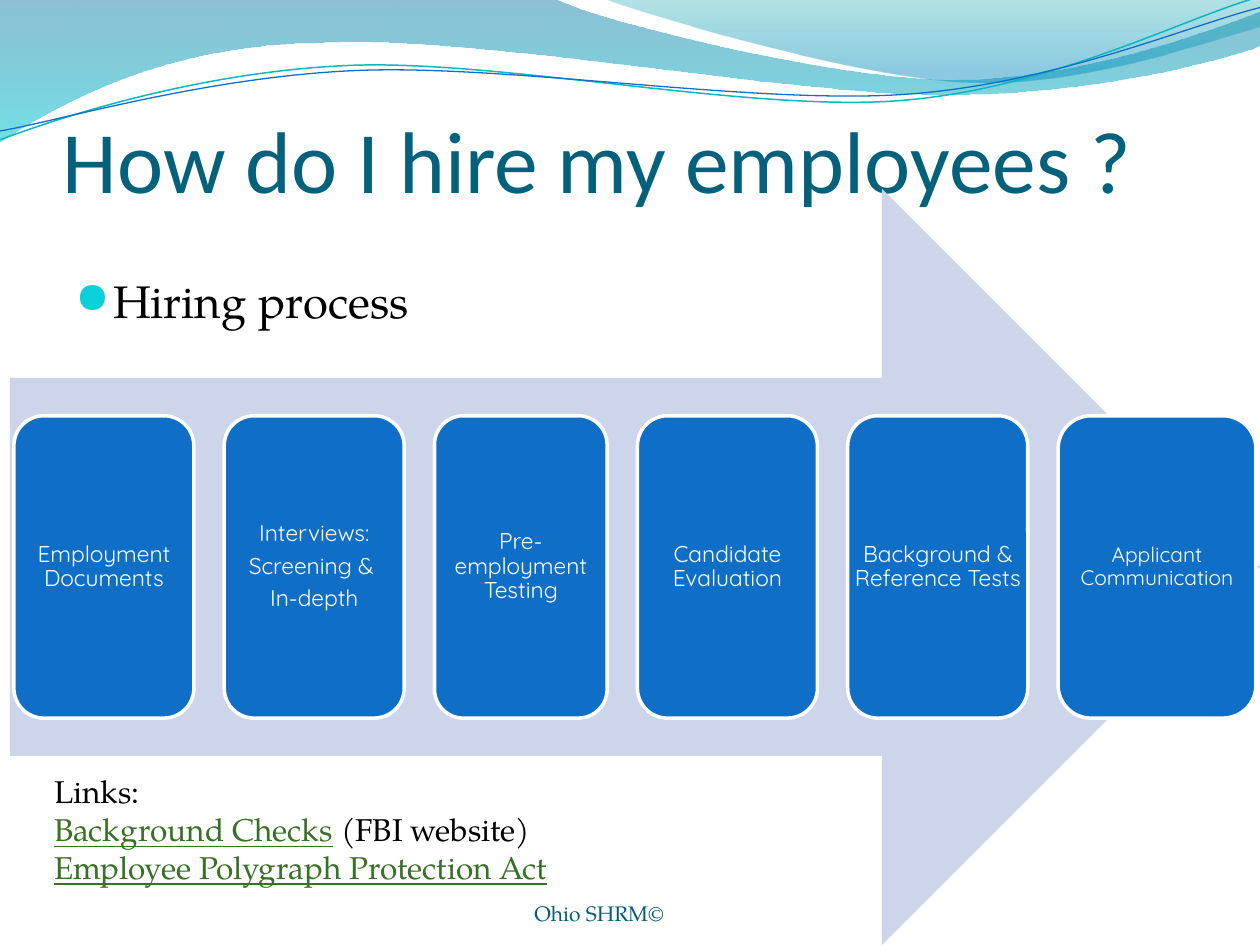
from lxml import etree
from pptx import Presentation
from pptx.dml.color import RGBColor
from pptx.enum.shapes import MSO_SHAPE as Shape
from pptx.enum.text import MSO_ANCHOR as Anchor, PP_ALIGN as Align
from pptx.oxml.ns import qn
from pptx.util import Cm, Pt

WHITE = RGBColor(0xFF, 0xFF, 0xFF)
BLACK = RGBColor(0, 0, 0)
TITLE_TEAL = RGBColor(0x04, 0x61, 0x7B)
FOOTER_TEAL = RGBColor(0x04, 0x5D, 0x75)
LINK_GREEN = RGBColor(0x38, 0x70, 0x25)
STEP_BLUE = RGBColor(0x0F, 0x6F, 0xC6)
ARROW_BLUE = RGBColor(0xCC, 0xD5, 0xEA)
LINE_TEAL = RGBColor(0x0A, 0xB8, 0xBF)
WAVE_BLUE = RGBColor(0x00, 0x74, 0xA1)
WAVE_CYAN = RGBColor(0x00, 0xC6, 0xCF)
CREST_GREEN = RGBColor(0x00, 0xA1, 0xA9)
CREST_BLUE = RGBColor(0x00, 0x8B, 0xBF)
BODY_FONT = "TeX Gyre Pagella"

WAVE_UNIT = Cm(0.0254)
STEP_GAP = 0.61
STEPS = [  # width, text size, paragraphs
    (3.63, 13, ["Employment Documents"]),
    (3.63, 13, ["Interviews:", "Screening & ", "In-depth"]),
    (3.48, 13, ["Pre-employment Testing"]),
    (3.63, 13, ["Candidate Evaluation"]),
    (3.63, 13, ["Background & Reference Tests"]),
    (3.99, 12, ["Applicant Communication"]),
]


def add_text_box(page, left, top, width, height, anchor=Anchor.TOP,
                 insets=(0.25, 0.13, 0.25, 0.13)):
    box = page.shapes.add_textbox(Cm(left), Cm(top), Cm(width), Cm(height))
    frame = box.text_frame
    frame.word_wrap = True
    frame.vertical_anchor = anchor
    (frame.margin_left, frame.margin_top,
     frame.margin_right, frame.margin_bottom) = map(Cm, insets)
    return frame


def add_span(para, text, size, color, font=BODY_FONT, underline=None):
    span = para.add_run()
    span.text = text
    span.font.size = Pt(size)
    span.font.name = font
    span.font.color.rgb = color
    span.font.underline = underline


def paragraphs(frame, count):
    return [frame.paragraphs[0]] + [frame.add_paragraph() for _ in range(count - 1)]


def add_curve(page, start, segments, closed=False):
    """Draw segments of one point (straight) or three points (cubic curve)."""
    builder = page.shapes.build_freeform(*start, scale=WAVE_UNIT)
    builder.add_line_segments([point for seg in segments for point in seg], close=closed)
    shape = builder.convert_to_shape()
    shape.shadow.inherit = False
    straight = iter(list(shape._element.iter(qn("a:lnTo"))))
    for seg in segments:
        parts = [next(straight) for _ in seg]
        if len(parts) == 3:
            curve = etree.Element(qn("a:cubicBezTo"))
            parts[0].addprevious(curve)
            for part in parts:
                curve.append(part[0])
                part.getparent().remove(part)
    return shape


def fill_gradient(shape, stops):
    """Fill from top to bottom with (position, colour, opacity percent) stops."""
    shape.line.fill.background()
    shape.fill.gradient()
    shape.fill.gradient_angle = 270
    for stop, (position, color, opacity) in zip(shape.fill.gradient_stops, stops):
        stop.position = position
        stop.color.rgb = color
    colors = shape._element.spPr.iter(qn("a:srgbClr"))
    for node, (_, _, opacity) in zip(list(colors), stops):
        etree.SubElement(node, qn("a:alpha"), val=str(opacity * 1000))


def add_waves(page):
    wave = add_curve(page, (0, -1), [
        [(440, -1)],
        [(476, 17), (664, 63), (758, 63)], [(853, 63), (958, 26), (1000, 9)],
        [(1001, 36)],
        [(983, 44), (870, 76), (746, 75)], [(622, 75), (382, 28), (257, 34)],
        [(129, 35), (46, 83), (-1, 113)],
    ], closed=True)
    fill_gradient(wave, [(0, WAVE_BLUE, 45), (1, WAVE_CYAN, 55)])

    crest = add_curve(page, (479, -1), [
        [(509, 11), (682, 62), (769, 65)], [(856, 69), (961, 32), (1000, 21)],
        [(1000, 0)],
    ], closed=True)
    fill_gradient(crest, [(0, CREST_GREEN, 30), (0.8, CREST_BLUE, 45)])

    strands = [
        (LINE_TEAL, 0.85, (0, 111), [
            [(48, 93), (158, 57), (277, 52)], [(395, 47), (593, 89), (713, 80)],
            [(833, 71), (938, 15), (998, -2)]]),
        (STEP_BLUE, 0.75, (0, 104), [
            [(47, 96), (164, 61), (283, 56)], [(403, 51), (597, 83), (717, 75)],
            [(836, 67), (941, 21), (1000, 6)]]),
    ]
    for color, width, start, segments in strands:
        strand = add_curve(page, start, segments)
        strand.fill.background()
        strand.line.color.rgb = color
        strand.line.width = Pt(width)


def add_title(page, left, top, width, height):
    frame = add_text_box(page, left, top, width, height, Anchor.BOTTOM, (0, 0.13, 0, 0))
    add_span(frame.paragraphs[0], "How do I hire my employees ?", 50, TITLE_TEAL, "Calibri")


def add_bullet_line(page, left, top, width, height):
    para = add_text_box(page, left, top, width, height).paragraphs[0]
    props = para._p.get_or_add_pPr()
    indent = Cm(0.76)
    props.set("marL", str(indent))
    props.set("indent", str(-indent))
    color = etree.SubElement(props, qn("a:buClr"))
    etree.SubElement(color, qn("a:srgbClr"), val="0BD0D9")
    etree.SubElement(props, qn("a:buSzPct"), val="95000")
    etree.SubElement(props, qn("a:buChar"), char="●")
    add_span(para, "Hiring process", 26, BLACK)


def add_footer(page, left, top, width, height):
    frame = add_text_box(page, left, top, width, height, Anchor.BOTTOM, (0, 0, 0, 0))
    frame.paragraphs[0].alignment = Align.CENTER
    add_span(frame.paragraphs[0], "Ohio SHRM©", 12, FOOTER_TEAL)


def add_step(page, left, top, width, height, size, lines):
    card = page.shapes.add_shape(
        Shape.ROUNDED_RECTANGLE, Cm(left), Cm(top), Cm(width), Cm(height))
    card.shadow.inherit = False
    card.fill.solid()
    card.fill.fore_color.rgb = STEP_BLUE
    card.line.color.rgb = WHITE
    card.line.width = Pt(2)
    frame = add_text_box(page, left, top, width, height, Anchor.MIDDLE, (0.13,) * 4)
    for para, line in zip(paragraphs(frame, len(lines)), lines):
        para.alignment = Align.CENTER
        para.line_spacing = 0.9
        para.space_after = Pt(0.35 * size)
        add_span(para, line, size, WHITE, "Quicksand")


def add_process(page, left, top, width, height):
    arrow = page.shapes.add_shape(
        Shape.RIGHT_ARROW, Cm(left), Cm(top), Cm(width), Cm(height))
    arrow.shadow.inherit = False
    arrow.fill.solid()
    arrow.fill.fore_color.rgb = ARROW_BLUE
    arrow.line.fill.background()
    step_left = left + 0.08
    for step_width, size, lines in STEPS:
        add_step(page, step_left, top + 0.3 * height, step_width, 0.4 * height, size, lines)
        step_left += step_width + STEP_GAP


def add_links(page, left, top, width, height):
    frame = add_text_box(page, left, top, width, height)
    heading, checks, polygraph = paragraphs(frame, 3)
    add_span(heading, "Links:", 18, BLACK)
    add_span(checks, "Background Checks", 18, LINK_GREEN, underline=True)
    add_span(checks, " (FBI website)", 18, BLACK)
    add_span(polygraph, "Employee Polygraph Protection Act", 18, LINK_GREEN, underline=True)


def main():
    deck = Presentation()
    deck.slide_width, deck.slide_height = Cm(25.4), Cm(19.05)
    page = deck.slides.add_slide(deck.slide_layouts[6])
    add_waves(page)
    add_title(page, 1.27, 1.07, 22.86, 3.18)
    add_bullet_line(page, 1.27, 5.38, 22.86, 2.24)
    add_footer(page, 7.42, 17.65, 9.32, 1.02)
    add_process(page, 0.2, 3.81, 25.2, 15.24)
    add_links(page, 0.84, 15.44, 12.9, 2.57)
    deck.save("out.pptx")


if __name__ == "__main__":
    main()
